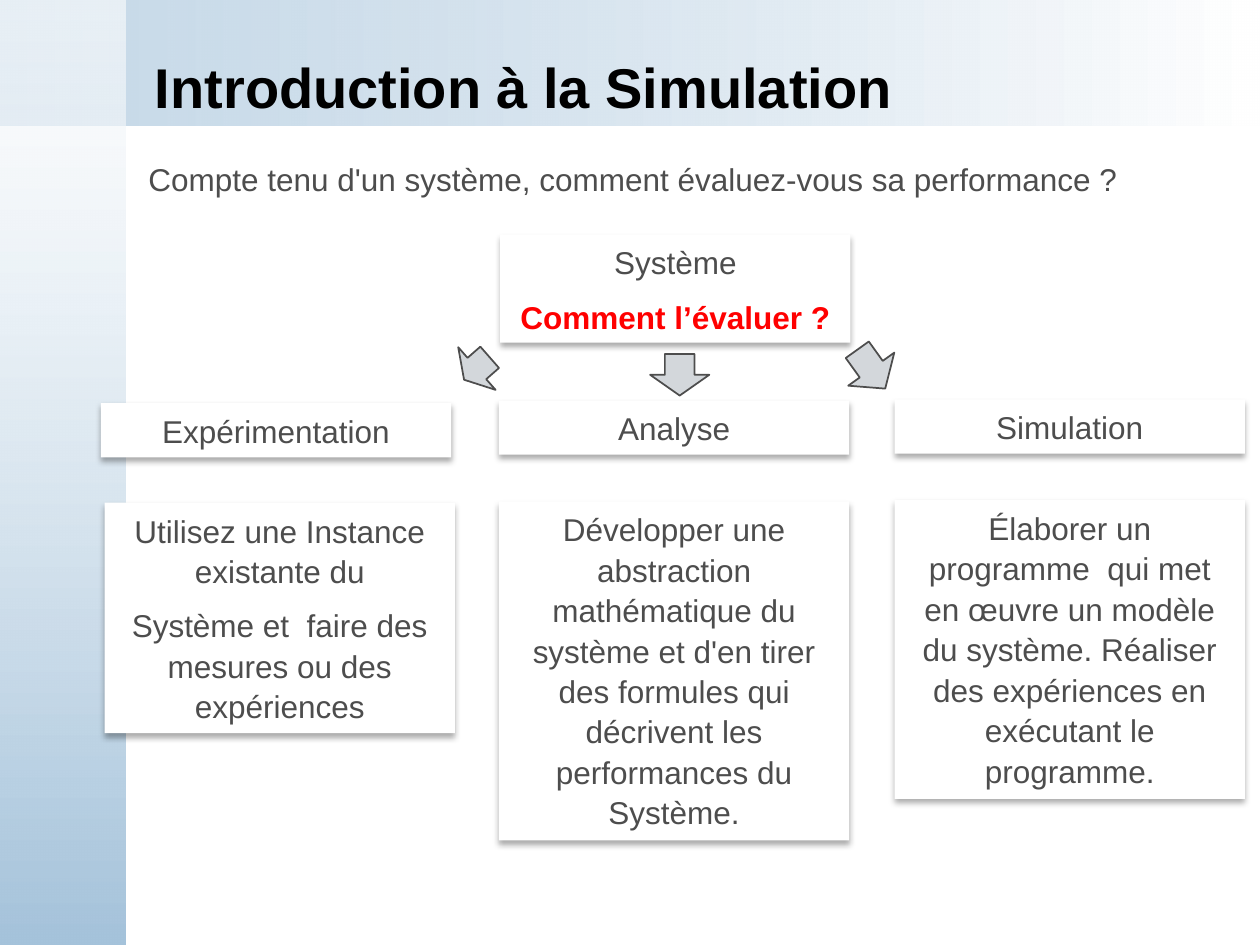
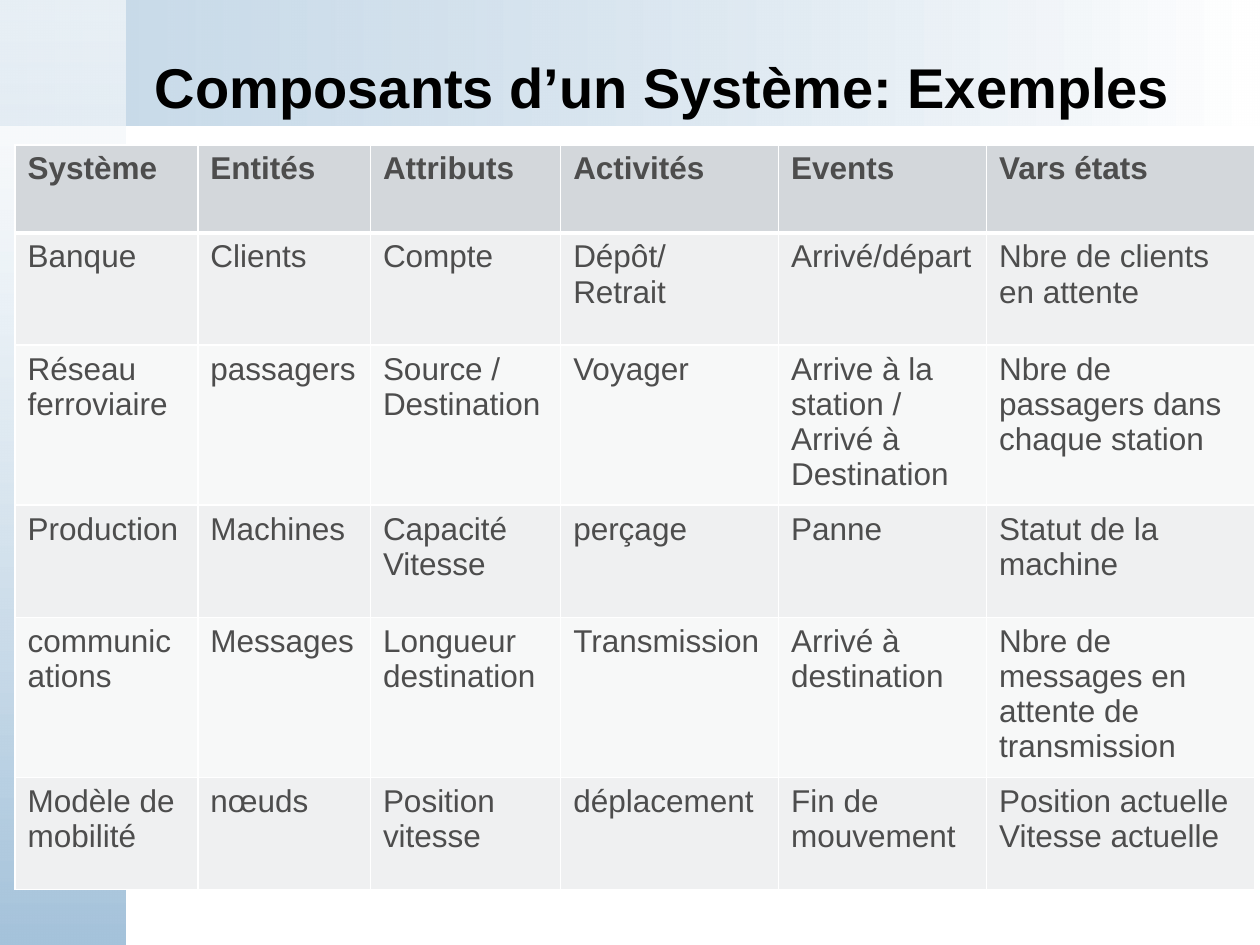
"""Build two slides introducing the simulation of systems."""
from lxml.etree import SubElement
from pptx import Presentation
from pptx.dml.color import RGBColor
from pptx.enum.shapes import MSO_SHAPE
from pptx.enum.text import MSO_ANCHOR, MSO_AUTO_SIZE, PP_ALIGN
from pptx.oxml.ns import qn
from pptx.util import Emu, Inches, Pt

WHITE = RGBColor(0xFF, 0xFF, 0xFF)
BLACK = RGBColor(0x00, 0x00, 0x00)
RED = RGBColor(0xFF, 0x00, 0x00)
GREY = RGBColor(0x4D, 0x4D, 0x4D)
SILVER = RGBColor(0xD3, 0xD7, 0xDB)
ROW_FILLS = [RGBColor(0xF7, 0xF8, 0xF8), RGBColor(0xEF, 0xF0, 0xF1)]
BLUE = RGBColor(0xA5, 0xC3, 0xDB)

SLIDE_WIDTH, SLIDE_HEIGHT = Inches(10), Inches(7.5)
GRID_COLUMNS, GRID_ROWS = 100, 75
BOX_WIDTH, LABEL_HEIGHT = 27.8, 4.3

TITLE_FONT = {"name": "Arial", "size": Pt(32), "bold": True}
BODY_FONT = {"name": "Arial", "size": Pt(18), "bold": False}
STRONG_FONT = {**BODY_FONT, "bold": True}
BOX_PARAGRAPH = {"alignment": PP_ALIGN.CENTER, "line_spacing": 1.07, "space_after": Pt(8)}

APPROACHES = [
    (8, 32, "Expérimentation", 8.3, 39.9, 18.3,
     ["Utilisez une Instance existante du",
      "Système et  faire des mesures ou des expériences"]),
    (39.6, 31.8, "Analyse", 39.6, 39.8, 26.9,
     ["Développer une abstraction mathématique du système et d'en tirer "
      "des formules qui décrivent les performances du Système."]),
    (71, 31.7, "Simulation", 71, 39.7, 23.7,
     ["Élaborer un programme  qui met en œuvre un modèle du système. "
      "Réaliser des expériences en exécutant le programme."]),
]
ARROWS = [
    ((51.6, 28.1, 4.7, 3.3), 0),
    ((66.9, 27.4, 4.5, 3.8), 324.3),
    ((35.6, 27.9, 4.5, 2.7), 48.8),
]
COMPONENTS = [
    ["Système", "Entités", "Attributs", "Activités", "Events", "Vars états"],
    ["Banque", "Clients", "Compte", "Dépôt/\nRetrait", "Arrivé/départ",
     "Nbre de clients en attente"],
    ["Réseau ferroviaire", "passagers", "Source / Destination", "Voyager",
     "Arrive à la station / Arrivé à Destination",
     "Nbre de passagers dans chaque station"],
    ["Production", "Machines", "Capacité\nVitesse", "perçage", "Panne",
     "Statut de la machine"],
    ["communications", "Messages", "Longueur\ndestination", "Transmission",
     "Arrivé à destination", "Nbre de messages en attente de transmission"],
    ["Modèle de mobilité", "nœuds", "Position\nvitesse", "déplacement",
     "Fin de mouvement", "Position actuelle\nVitesse actuelle"],
]
COLUMN_WIDTHS = [14.5, 13.7, 15.1, 17.3, 16.5, 21.3]
ROW_HEIGHTS = [7, 8.9, 12.7, 8.9, 12.7, 8.9]
HEADER_RULE = {(0, "B"), (1, "T")}


def across(columns):
    return Emu(round(SLIDE_WIDTH * columns / GRID_COLUMNS))


def down(rows):
    return Emu(round(SLIDE_HEIGHT * rows / GRID_ROWS))


def area(column, row, columns, rows):
    return across(column), down(row), across(columns), down(rows)


def assign(target, values):
    for name, value in values.items():
        setattr(target, name, value)


def write(frame, lines, paragraph_format=None):
    """Fill a frame with (text, font values, colour) paragraphs."""
    for index, (text, font, color) in enumerate(lines):
        para = frame.add_paragraph() if index else frame.paragraphs[0]
        assign(para, paragraph_format or {})
        span = para.add_run()
        span.text = text
        assign(span.font, font)
        span.font.color.rgb = color


def add_plain_shape(page, kind, place, fill):
    shape = page.shapes.add_shape(kind, *place)
    shape.shadow.inherit = False
    shape.line.fill.background()
    if fill is not None:
        shape.fill.solid()
        shape.fill.fore_color.rgb = fill
    return shape


def add_band(page, layout, place, colors, opacity, angle):
    """Put a gradient band with a translucent first stop on the layout."""
    band = add_plain_shape(page, MSO_SHAPE.RECTANGLE, place, None)
    band.fill.gradient()
    band.fill.gradient_angle = angle
    for stop, color in zip(band.fill.gradient_stops, colors):
        stop.color.rgb = color
    first_color = next(band.element.iter(qn("a:srgbClr")))
    SubElement(first_color, qn("a:alpha"), val=str(opacity * 1000))
    layout.shapes.element.insert_element_before(band.element, "p:extLst")


def add_titled_page(deck, layout, title):
    page = deck.slides.add_slide(layout)
    box = page.shapes.title
    assign(box, dict(zip(("left", "top", "width", "height"), area(11.3, 4.4, 84.5, 4.9))))
    frame = box.text_frame
    assign(frame, {"word_wrap": True, "auto_size": MSO_AUTO_SIZE.NONE,
                   "vertical_anchor": MSO_ANCHOR.MIDDLE})
    write(frame, [(title, TITLE_FONT, BLACK)], {"alignment": PP_ALIGN.LEFT})
    return page


def add_card(page, place, lines):
    """Add a white box with a soft shadow below it."""
    card = add_plain_shape(page, MSO_SHAPE.RECTANGLE, place, WHITE)
    effects = card.element.spPr.find(qn("a:effectLst"))
    shadow = SubElement(effects, qn("a:outerShdw"), blurRad=str(Pt(3.5)),
                        dist=str(Pt(2.2)), dir="5400000", rotWithShape="0")
    color = SubElement(shadow, qn("a:srgbClr"), val=str(BLACK))
    SubElement(color, qn("a:alpha"), val="32000")
    assign(card.text_frame, {"word_wrap": True, "vertical_anchor": MSO_ANCHOR.TOP})
    write(card.text_frame, lines, BOX_PARAGRAPH)


def add_arrow(page, place, rotation):
    arrow = add_plain_shape(page, MSO_SHAPE.DOWN_ARROW, place, SILVER)
    arrow.rotation = rotation
    arrow.line.color.rgb = GREY
    arrow.line.width = Pt(1)


def add_cell_borders(cell, row):
    properties = cell._tc.get_or_add_tcPr()
    for side in "LRTB":
        width = Pt(3 if (row, side) in HEADER_RULE else 1)
        border = SubElement(properties, qn(f"a:ln{side}"), w=str(width))
        SubElement(SubElement(border, qn("a:solidFill")), qn("a:srgbClr"), val=str(WHITE))


def add_component_table(page):
    place = area(1.2, 11.5, sum(COLUMN_WIDTHS), sum(ROW_HEIGHTS))
    table = page.shapes.add_table(len(COMPONENTS), len(COLUMN_WIDTHS), *place).table
    for column, width in zip(table.columns, COLUMN_WIDTHS):
        column.width = across(width)
    for row, height in zip(table.rows, ROW_HEIGHTS):
        row.height = down(height)
    for row, texts in enumerate(COMPONENTS):
        for column, text in enumerate(texts):
            cell = table.cell(row, column)
            add_cell_borders(cell, row)
            cell.fill.solid()
            cell.fill.fore_color.rgb = ROW_FILLS[row % 2] if row else SILVER
            font = BODY_FONT if row else STRONG_FONT
            write(cell.text_frame, [(line, font, GREY) for line in text.split("\n")])


def fill_introduction(page):
    add_card(page, area(39.7, 18.6, BOX_WIDTH, 8.6),
             [("Système", BODY_FONT, GREY), ("Comment l’évaluer ?", STRONG_FONT, RED)])
    for label_left, label_top, label, left, top, height, texts in APPROACHES:
        add_card(page, area(label_left, label_top, BOX_WIDTH, LABEL_HEIGHT),
                 [(label, BODY_FONT, GREY)])
        add_card(page, area(left, top, BOX_WIDTH, height),
                 [(text, BODY_FONT, GREY) for text in texts])
    question = page.shapes.add_textbox(*area(10.8, 12.2, 85, 4))
    question.text_frame.word_wrap = True
    write(question.text_frame,
          [("Compte tenu d'un système, comment évaluez-vous sa performance ?",
            BODY_FONT, GREY)])
    for place, rotation in ARROWS:
        add_arrow(page, area(*place), rotation)


def main():
    deck = Presentation()
    assign(deck, {"slide_width": SLIDE_WIDTH, "slide_height": SLIDE_HEIGHT})
    layout = deck.slide_layouts[5]
    introduction = add_titled_page(deck, layout, "Introduction à la Simulation")
    add_band(introduction, layout, area(0, 0, GRID_COLUMNS, 10), (BLUE, WHITE), 62, 0)
    add_band(introduction, layout, area(0, 0, 10, GRID_ROWS), (WHITE, BLUE), 59, 270)
    fill_introduction(introduction)
    add_component_table(add_titled_page(deck, layout, "Composants d’un Système: Exemples"))
    deck.save("out.pptx")


if __name__ == "__main__":
    main()
